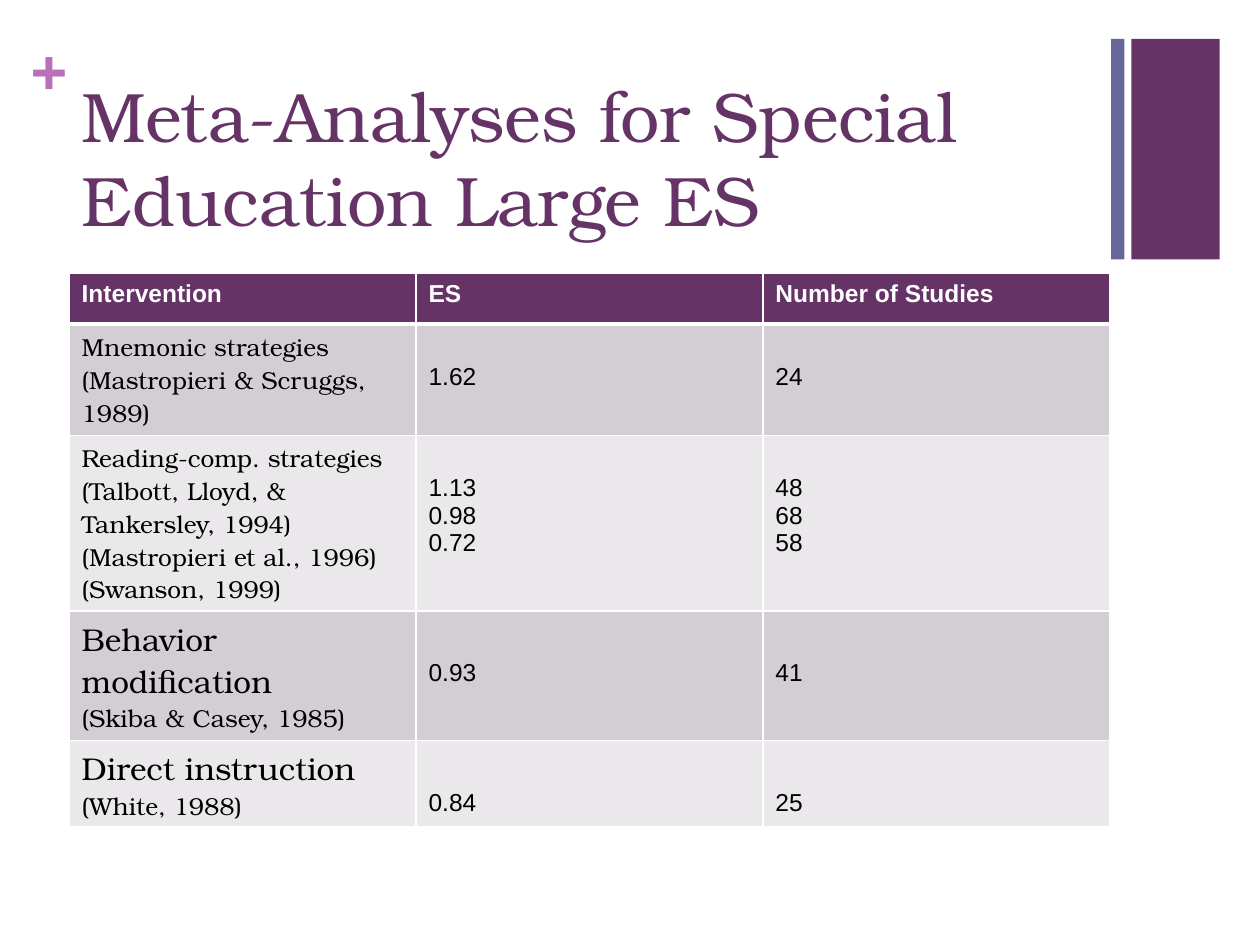
"""Builds the slide on large effect sizes in special education meta-analyses."""
import lxml.etree
import pptx
import pptx.dml.color
import pptx.enum.shapes
import pptx.enum.text
import pptx.oxml.ns
import pptx.util

Pt = pptx.util.Pt
SERIF, SANS = "TeX Gyre Bonum", "Arial"
PURPLE, SLATE, ORCHID = "663366", "666699", "B870B8"
WHITE, BLACK = "FFFFFF", "000000"
BANDS = ["D3CED3", "EAE8EA"]

TITLE = "Meta-Analyses for Special Education Large ES"
HEADINGS = ["Intervention", "ES", "Number of Studies"]
INTERVENTIONS = [
    {"name": "Mnemonic strategies", "size": 14, "height": 63.5,
     "sources": ["(Mastropieri & Scruggs, 1989)"],
     "effects": ["1.62"], "studies": ["24"]},
    {"name": "Reading-comp. strategies", "size": 14, "height": 100.5,
     "sources": ["(Talbott, Lloyd, & Tankersley, 1994)",
                 "(Mastropieri et al., 1996)", "(Swanson, 1999)"],
     "effects": ["1.13", "0.98", "0.72"], "studies": ["48", "68", "58"]},
    {"name": "Behavior modification", "size": 18, "height": 74,
     "sources": ["(Skiba & Casey, 1985)"],
     "effects": ["0.93"], "studies": ["41"]},
    {"name": "Direct instruction", "size": 18, "height": 49.5,
     "sources": ["(White, 1988)"],
     "effects": ["0.84"], "studies": ["25"]},
]
BARS = [(646.5, 50.5, PURPLE), (635, 7.5, SLATE)]
LEFT, WIDTH, TABLE_TOP, HEADER_HEIGHT = 39.5, 594.75, 156.25, 29
INSET, SERIF_LINE = 3.6, 1.335


def color(code):
    return pptx.dml.color.RGBColor.from_string(code)


def write(frame, lines, font, ink, bold=False):
    for index, (words, size) in enumerate(lines):
        paragraph = frame.paragraphs[0] if index == 0 else frame.add_paragraph()
        paragraph.alignment = pptx.enum.text.PP_ALIGN.LEFT
        run = paragraph.add_run()
        run.text = words
        run.font.name, run.font.size, run.font.bold = font, Pt(size), bold
        run.font.color.rgb = color(ink)


def paint(cell, fill, top, bottom):
    properties = cell._tc.get_or_add_tcPr()
    for side, width in (("L", 1), ("R", 1), ("T", top), ("B", bottom)):
        border = lxml.etree.SubElement(
            properties, pptx.oxml.ns.qn(f"a:ln{side}"), w=str(Pt(width)))
        solid = lxml.etree.SubElement(border, pptx.oxml.ns.qn("a:solidFill"))
        lxml.etree.SubElement(solid, pptx.oxml.ns.qn("a:srgbClr"), val=WHITE)
    cell.fill.solid()
    cell.fill.fore_color.rgb = color(fill)


def add_decoration(slide):
    for left, width, fill in BARS:
        bar = slide.shapes.add_shape(
            pptx.enum.shapes.MSO_SHAPE.RECTANGLE, Pt(left), Pt(22.25), Pt(width), Pt(126))
        bar.shadow.inherit = False
        bar.fill.solid()
        bar.fill.fore_color.rgb = color(fill)
        bar.line.fill.background()
    plus = slide.shapes.add_textbox(Pt(17.5), Pt(18), Pt(21), Pt(44)).text_frame
    plus.margin_left = plus.margin_right = plus.margin_top = plus.margin_bottom = 0
    plus.word_wrap = True
    write(plus, [("+", 36)], SANS, ORCHID, True)


def add_title(slide):
    title = slide.shapes.title
    title.left, title.top, title.width, title.height = Pt(LEFT), Pt(38), Pt(WIDTH), Pt(88)
    frame = title.text_frame
    frame.word_wrap = True
    frame.auto_size = pptx.enum.text.MSO_AUTO_SIZE.NONE
    frame.vertical_anchor = pptx.enum.text.MSO_ANCHOR.TOP
    write(frame, [(TITLE, 40)], SERIF, PURPLE)


def add_results(slide):
    heights = [HEADER_HEIGHT] + [entry["height"] for entry in INTERVENTIONS]
    results = slide.shapes.add_table(
        len(heights), len(HEADINGS), Pt(LEFT), Pt(TABLE_TOP),
        Pt(WIDTH), Pt(sum(heights))).table
    for row, height in zip(results.rows, heights):
        row.height = Pt(height)
    for column, heading in enumerate(HEADINGS):
        cell = results.cell(0, column)
        paint(cell, PURPLE, 1, 3)
        write(cell.text_frame, [(heading, 14)], SANS, WHITE, True)
    for row, entry in enumerate(INTERVENTIONS, 1):
        for column in range(len(HEADINGS)):
            paint(results.cell(row, column), BANDS[(row - 1) % 2], 3 if row == 1 else 1, 1)
        lines = [(entry["name"], entry["size"])]
        lines += [(source, 14) for source in entry["sources"]]
        write(results.cell(row, 0).text_frame, lines, SERIF, BLACK)
        for column, key in ((1, "effects"), (2, "studies")):
            cell = results.cell(row, column)
            cell.margin_top = Pt(round(INSET + entry["size"] * SERIF_LINE, 2))
            write(cell.text_frame, [(value, 14) for value in entry[key]], SANS, BLACK)


def main():
    deck = pptx.Presentation()
    deck.slide_width, deck.slide_height = Pt(720), Pt(540)
    slide = deck.slides.add_slide(deck.slide_layouts[5])
    add_decoration(slide)
    add_title(slide)
    add_results(slide)
    deck.save("out.pptx")


if __name__ == "__main__":
    main()
